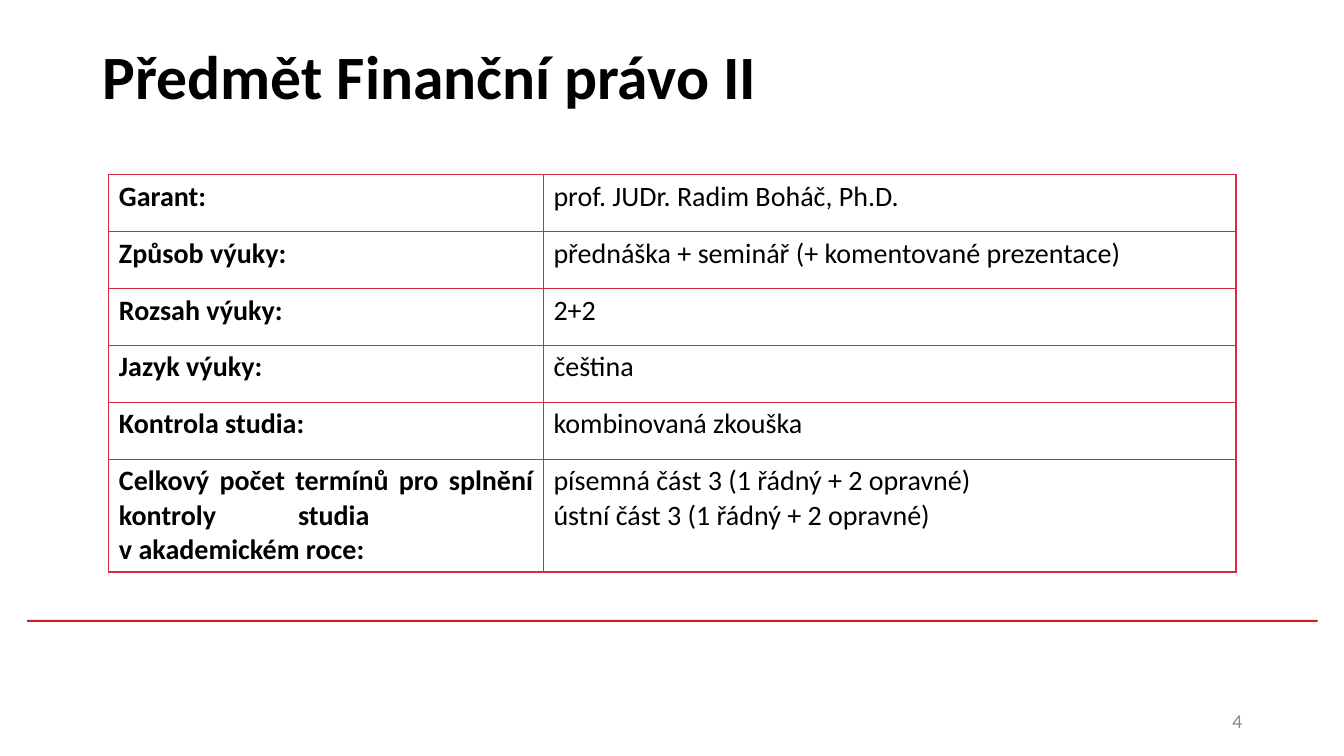
from lxml.etree import SubElement
from pptx import Presentation
from pptx.dml.color import RGBColor
from pptx.enum.shapes import MSO_SHAPE
from pptx.enum.text import MSO_ANCHOR, MSO_AUTO_SIZE, PP_ALIGN
from pptx.oxml.ns import qn
from pptx.util import Inches, Pt

FONT = "Calibri"
BLACK = RGBColor(0x00, 0x00, 0x00)
GREY = RGBColor(0x8C, 0x8C, 0x8C)
RULE_RED = RGBColor(0xCD, 0x1F, 0x21)
BORDER_RED = RGBColor(0xD2, 0x2D, 0x40)

COLUMN_WIDTHS = (4.31, 6.87)
ROW_HEIGHT = 0.565
LAST_ROW_HEIGHT = 1.12

# Label and the paragraphs of its value
COURSE_FACTS = [
    ("Garant:", ["prof. JUDr. Radim Boháč, Ph.D."]),
    ("Způsob výuky:", ["přednáška + seminář (+ komentované prezentace)"]),
    ("Rozsah výuky:", ["2+2"]),
    ("Jazyk výuky:", ["čeština"]),
    ("Kontrola studia:", ["kombinovaná zkouška"]),
    ("Celkový počet termínů pro splnění kontroly studia  \nv akademickém roce:",
     ["písemná část 3 (1 řádný + 2 opravné)",
      "ústní část 3 (1 řádný + 2 opravné)"]),
]


def write_text(frame, paragraphs, size=20, color=BLACK, bold=False,
               align=PP_ALIGN.LEFT, anchor=MSO_ANCHOR.TOP):
    frame.word_wrap = True
    frame.vertical_anchor = anchor
    for index, text in enumerate(paragraphs):
        para = frame.add_paragraph() if index else frame.paragraphs[0]
        para.text = text
        para.alignment = align
        for span in para.runs:
            span.font.name = FONT
            span.font.size = Pt(size)
            span.font.bold = bold
            span.font.color.rgb = color


def add_rule(slide):
    rule = slide.shapes.add_shape(MSO_SHAPE.RECTANGLE, Inches(0.27), Inches(6.15),
                                  Inches(12.8), Inches(0.02))
    rule.shadow.inherit = False
    rule.fill.solid()
    rule.fill.fore_color.rgb = RULE_RED
    rule.line.fill.background()


def add_title(slide, text):
    title = slide.shapes.title
    title.left, title.top = Inches(0.92), Inches(0.02)
    title.width, title.height = Inches(11.5), Inches(1.45)
    title.text_frame.auto_size = MSO_AUTO_SIZE.NONE
    write_text(title.text_frame, [text], size=44, bold=True,
               anchor=MSO_ANCHOR.MIDDLE)


def add_page_number(slide, number):
    box = slide.shapes.add_textbox(Inches(9.42), Inches(6.95), Inches(3), Inches(0.4))
    write_text(box.text_frame, [number], size=14, color=GREY,
               align=PP_ALIGN.RIGHT, anchor=MSO_ANCHOR.MIDDLE)


def set_borders(cell):
    properties = cell._tc.get_or_add_tcPr()
    for side in ("a:lnL", "a:lnR", "a:lnT", "a:lnB"):
        border = SubElement(properties, qn(side), w=str(Pt(1)))
        fill = SubElement(border, qn("a:solidFill"))
        SubElement(fill, qn("a:srgbClr"), val=str(BORDER_RED))


def fill_cell(cell, paragraphs, bold):
    write_text(cell.text_frame, paragraphs, bold=bold, align=PP_ALIGN.JUSTIFY)
    set_borders(cell)
    cell.fill.background()


def add_facts_table(slide, facts):
    height = ROW_HEIGHT * (len(facts) - 1) + LAST_ROW_HEIGHT
    frame = slide.shapes.add_table(len(facts), len(COLUMN_WIDTHS), Inches(1.08),
                                   Inches(1.73), Inches(sum(COLUMN_WIDTHS)),
                                   Inches(height))
    table = frame.table
    table.first_row = False
    table.horz_banding = False
    for column, width in zip(table.columns, COLUMN_WIDTHS):
        column.width = Inches(width)
    for index, (label, values) in enumerate(facts):
        is_last = index == len(facts) - 1
        table.rows[index].height = Inches(LAST_ROW_HEIGHT if is_last else ROW_HEIGHT)
        fill_cell(table.cell(index, 0), [label], bold=True)
        fill_cell(table.cell(index, 1), values, bold=False)


def main():
    deck = Presentation()
    deck.slide_width, deck.slide_height = Inches(13.33), Inches(7.5)
    slide = deck.slides.add_slide(deck.slide_layouts[5])
    add_rule(slide)
    add_title(slide, "Předmět Finanční právo II")
    add_page_number(slide, "4")
    add_facts_table(slide, COURSE_FACTS)
    deck.save("out.pptx")


if __name__ == "__main__":
    main()
